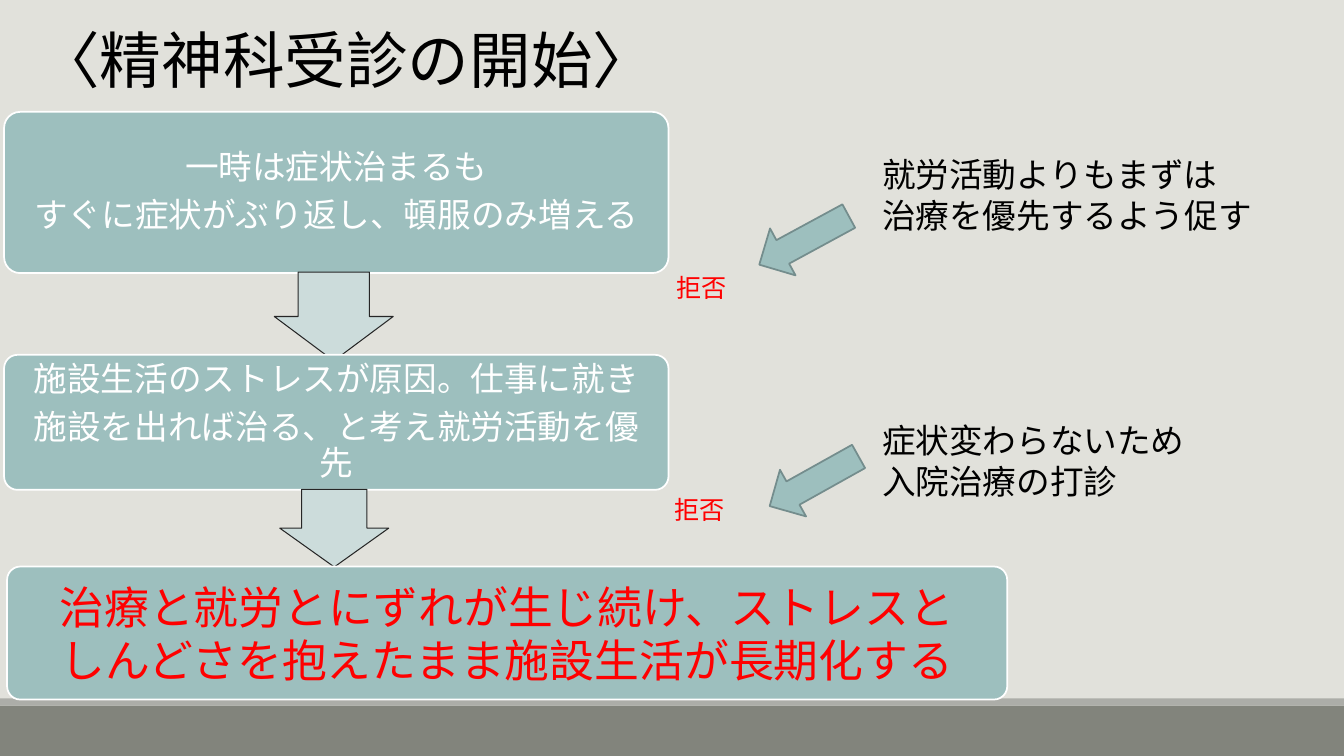
from pptx import Presentation
from pptx.dml.color import RGBColor
from pptx.enum.shapes import MSO_SHAPE
from pptx.enum.text import MSO_ANCHOR, MSO_AUTO_SIZE, PP_ALIGN
from pptx.util import Inches, Pt

COLORS = {
    "background": "E1E1DB",
    "footer": "82847C",
    "footer_edge": "ACADA8",
    "teal": "9DBFBE",
    "teal_edge": "748D8D",
    "pale": "CCDCDB",
    "dark": "262626",
    "white": "FFFFFF",
    "black": "000000",
    "red": "FF0000",
}
FONT = "Calibri"


def color(name):
    return RGBColor.from_string(COLORS[name])


def write(frame, lines, size, ink, align=PP_ALIGN.LEFT, spacing=1.0, after=0):
    frame.word_wrap = True
    for index, line in enumerate(lines):
        para = frame.paragraphs[0] if index == 0 else frame.add_paragraph()
        para.alignment = align
        para.line_spacing = spacing
        para.space_after = Pt(after)
        span = para.add_run()
        span.text = line
        span.font.name = FONT
        span.font.size = Pt(size)
        span.font.color.rgb = color(ink)


def add_block(page, kind, box, fill, edge=None, width=1.25):
    block = page.shapes.add_shape(kind, *map(Inches, box))
    block.shadow.inherit = False
    block.fill.solid()
    block.fill.fore_color.rgb = color(fill)
    if edge:
        block.line.color.rgb = color(edge)
        block.line.width = Pt(width)
    else:
        block.line.fill.background()
    return block


def add_footer(page, box):
    left, top, width, height = box
    edge = 0.07
    add_block(page, MSO_SHAPE.RECTANGLE, (left, top + edge, width, height - edge), "footer")
    add_block(page, MSO_SHAPE.RECTANGLE, (left, top, width, edge), "footer_edge")


def add_title(page, box, text):
    title = page.shapes.title
    title.left, title.top, title.width, title.height = map(Inches, box)
    frame = title.text_frame
    frame.auto_size = MSO_AUTO_SIZE.NONE
    frame.vertical_anchor = MSO_ANCHOR.TOP
    write(frame, [text], 44, "black")


def add_card(page, box):
    card = add_block(page, MSO_SHAPE.ROUNDED_RECTANGLE, box, "teal", "white")
    card.adjustments[0] = 0.1
    card.text_frame.vertical_anchor = MSO_ANCHOR.MIDDLE
    return card.text_frame


def add_stage(page, box, lines):
    frame = add_card(page, box)
    frame.margin_top = frame.margin_bottom = Inches(0.1)
    write(frame, lines, 24, "white", PP_ALIGN.CENTER, 0.9, 8.4)


def add_outcome(page, box, lines):
    write(add_card(page, box), lines, 32, "red", PP_ALIGN.CENTER)


def add_step_arrow(page, box):
    arrow = add_block(page, MSO_SHAPE.RIGHT_ARROW, box, "pale", "dark", 0.75)
    arrow.rotation = 90
    arrow.adjustments[0] = 0.6
    arrow.adjustments[1] = 0.5


def add_advice_arrow(page, box, rotation):
    arrow = add_block(page, MSO_SHAPE.LEFT_ARROW, box, "teal", "teal_edge")
    arrow.rotation = rotation


def add_note(page, box, lines, size, ink):
    note = page.shapes.add_textbox(*map(Inches, box))
    write(note.text_frame, lines, size, ink)


def main():
    deck = Presentation()
    deck.slide_width, deck.slide_height = Inches(13.33), Inches(7.5)
    page = deck.slides.add_slide(deck.slide_layouts[5])
    page.background.fill.solid()
    page.background.fill.fore_color.rgb = color("background")

    add_footer(page, (0, 6.93, 13.33, 0.57))
    add_title(page, (0.28, 0.17, 6.63, 0.84), "〈精神科受診の開始〉")

    add_stage(page, (0.04, 1.11, 6.59, 1.6),
              ["一時は症状治まるも", "すぐに症状がぶり返し、頓服のみ増える"])
    add_step_arrow(page, (2.87, 2.55, 0.88, 1.18))
    add_stage(page, (0.04, 3.52, 6.59, 1.34),
              ["施設生活のストレスが原因。仕事に就き", "施設を出れば治る、と考え就労活動を優先"])
    add_step_arrow(page, (2.93, 4.7, 0.77, 1.08))
    add_outcome(page, (0.07, 5.62, 9.92, 1.32),
                ["治療と就労とにずれが生じ続け、ストレスと", "しんどさを抱えたまま施設生活が長期化する"])

    add_note(page, (8.65, 1.48, 3.92, 0.91),
             ["就労活動よりもまずは", "治療を優先するよう促す"], 24, "black")
    add_note(page, (8.65, 4.12, 3.92, 0.91),
             ["症状変わらないため", "入院治療の打診"], 24, "black")
    add_advice_arrow(page, (7.47, 2.12, 1.01, 0.53), 331.5)
    add_advice_arrow(page, (7.57, 4.51, 1.01, 0.53), 330.8)
    for left, top in ((6.61, 2.65), (6.59, 4.85)):
        add_note(page, (left, top, 0.82, 0.4), ["拒否"], 18, "red")

    deck.save("out.pptx")


if __name__ == "__main__":
    main()
